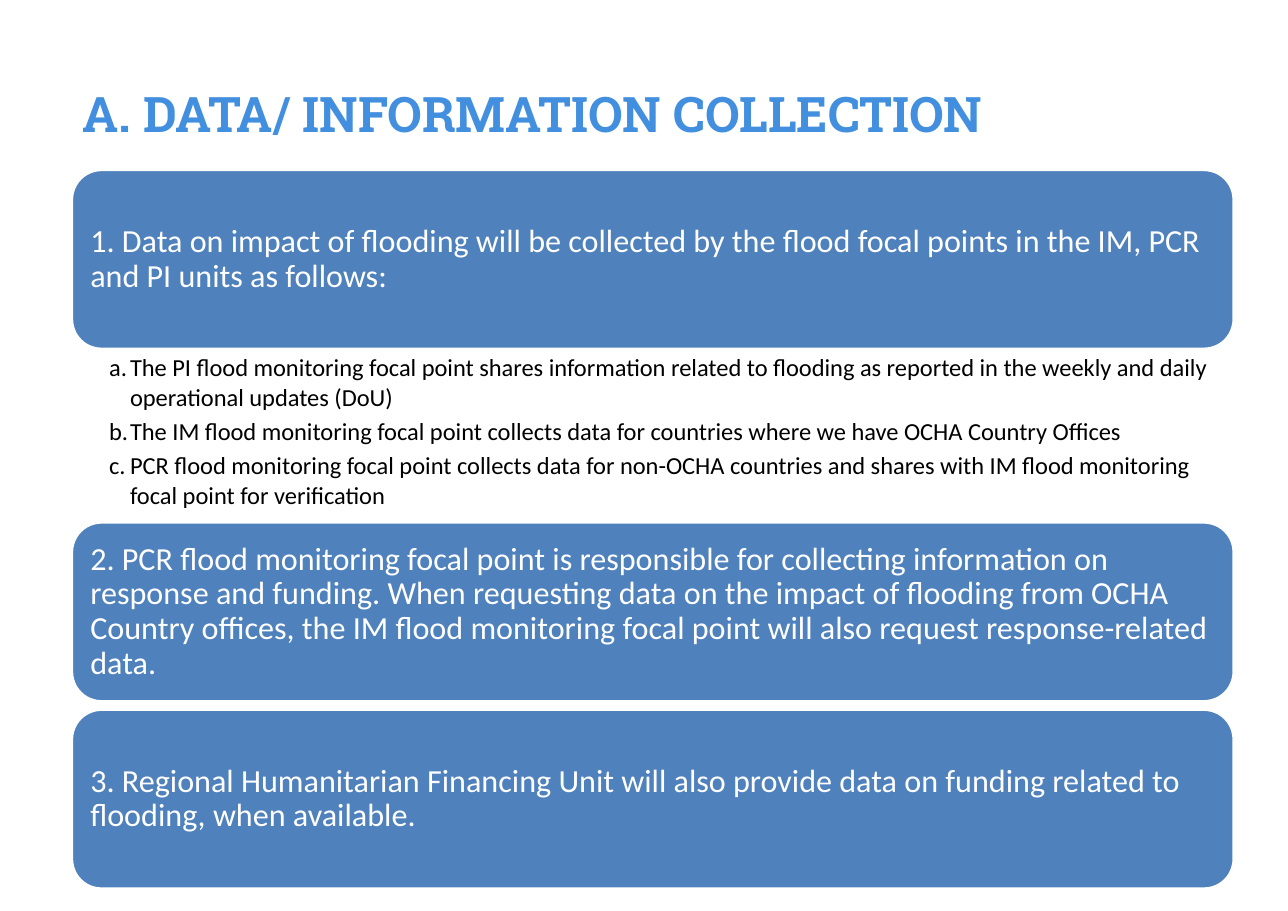
from dataclasses import dataclass

from lxml import etree
from pptx import Presentation, util as u
from pptx.dml.color import RGBColor
from pptx.enum import shapes, text
from pptx.oxml import ns

CELL = u.Inches(0.1)
LEFT, WIDTH = 6.5, 105.5
FIRST_ROW = 15.4
STEP_ROWS, DETAIL_ROWS, GAP_ROWS = 16.3, 15.7, 0.7
BLUE, PANEL, WHITE, BLACK = "418FDE", "4F81BD", "FFFFFF", "000000"


@dataclass
class Step:
    wording: str
    details: tuple[str, ...] = ()


HEADING = "A. DATA/ INFORMATION COLLECTION"
STEPS = [
    Step(
        "1. Data on impact of flooding will be collected by the flood focal points "
        "in the IM, PCR and PI units as follows:",
        (
            "The PI flood monitoring focal point shares information related to flooding "
            "as reported in the weekly and daily operational updates (DoU)",
            "The IM flood monitoring focal point collects data for countries where we "
            "have OCHA Country Offices",
            "PCR flood monitoring focal point collects data for non-OCHA countries and "
            "shares with IM flood monitoring focal point for verification",
        ),
    ),
    Step(
        "2. PCR flood monitoring focal point is responsible for collecting information "
        "on response and funding. When requesting data on the impact of flooding from "
        "OCHA Country offices, the IM flood monitoring focal point will also request "
        "response-related data."
    ),
    Step(
        "3. Regional Humanitarian Financing Unit will also provide data on funding "
        "related to flooding, when available."
    ),
]


def colour(value: str) -> RGBColor:
    return RGBColor.from_string(value)


def cells(*counts: float) -> list[int]:
    return [round(count * CELL) for count in counts]


def place(holder, left: float, top: float, width: float, height: float) -> None:
    holder.left, holder.top, holder.width, holder.height = cells(left, top, width, height)


def set_frame(frame, anchor, left: float, top: float, right: float, bottom: float) -> None:
    frame.word_wrap = True
    frame.auto_size = text.MSO_AUTO_SIZE.NONE
    frame.vertical_anchor = anchor
    (frame.margin_left, frame.margin_top,
     frame.margin_right, frame.margin_bottom) = cells(left, top, right, bottom)


def style(paragraph, face: str, size: float, shade: str, bold: bool = False) -> None:
    paragraph.alignment = text.PP_ALIGN.LEFT
    paragraph.space_before = u.Pt(0)
    paragraph.font.name = face
    paragraph.font.size = u.Pt(size)
    paragraph.font.bold = bold
    paragraph.font.color.rgb = colour(shade)


def add_letter(paragraph) -> None:
    properties = paragraph._p.get_or_add_pPr()
    indent = u.Inches(0.19)
    properties.set("marL", str(indent))
    properties.set("indent", str(-indent))
    numbering = etree.Element(ns.qn("a:buAutoNum"), type="alphaLcPeriod")
    properties.find(ns.qn("a:defRPr")).addprevious(numbering)


def write_heading(title) -> None:
    place(title, 7.5, 7.6, 102.2, 10)
    title.text_frame.text = HEADING
    set_frame(title.text_frame, text.MSO_ANCHOR.TOP, 0, 0, 0, 0)
    style(title.text_frame.paragraphs[0], "Roboto Slab", 32, BLUE, True)


def write_details(body, top: float, details: tuple[str, ...]) -> None:
    place(body, LEFT, top, WIDTH, DETAIL_ROWS)
    body.text_frame.text = "\n".join(details)
    set_frame(body.text_frame, text.MSO_ANCHOR.TOP, 3.4, 0.3, 1.6, 0.3)
    for paragraph in body.text_frame.paragraphs:
        style(paragraph, "Calibri", 16, BLACK)
        paragraph.space_after = u.Pt(3.2)
        add_letter(paragraph)


def add_panel(slide, top: float, wording: str) -> None:
    panel = slide.shapes.add_shape(
        shapes.MSO_SHAPE.ROUNDED_RECTANGLE, *cells(LEFT, top, WIDTH, STEP_ROWS)
    )
    panel.shadow.inherit = False
    panel.fill.solid()
    panel.fill.fore_color.rgb = colour(PANEL)
    panel.line.color.rgb = colour(WHITE)
    panel.line.width = u.Pt(2)
    panel.text_frame.text = wording
    set_frame(panel.text_frame, text.MSO_ANCHOR.MIDDLE, 0.9, 0.9, 0.9, 0.9)
    paragraph = panel.text_frame.paragraphs[0]
    style(paragraph, "Calibri", 21, WHITE)
    paragraph.line_spacing = 0.9


def main() -> None:
    deck = Presentation()
    deck.slide_width, deck.slide_height = u.Inches(11.69), u.Inches(8.27)
    slide = deck.slides.add_slide(deck.slide_layouts[1])
    write_heading(slide.shapes.title)
    top = FIRST_ROW
    for step in STEPS:
        add_panel(slide, top, step.wording)
        top += STEP_ROWS
        if step.details:
            write_details(slide.placeholders[1], top, step.details)
            top += DETAIL_ROWS
        else:
            top += GAP_ROWS
    deck.save("out.pptx")


if __name__ == "__main__":
    main()
